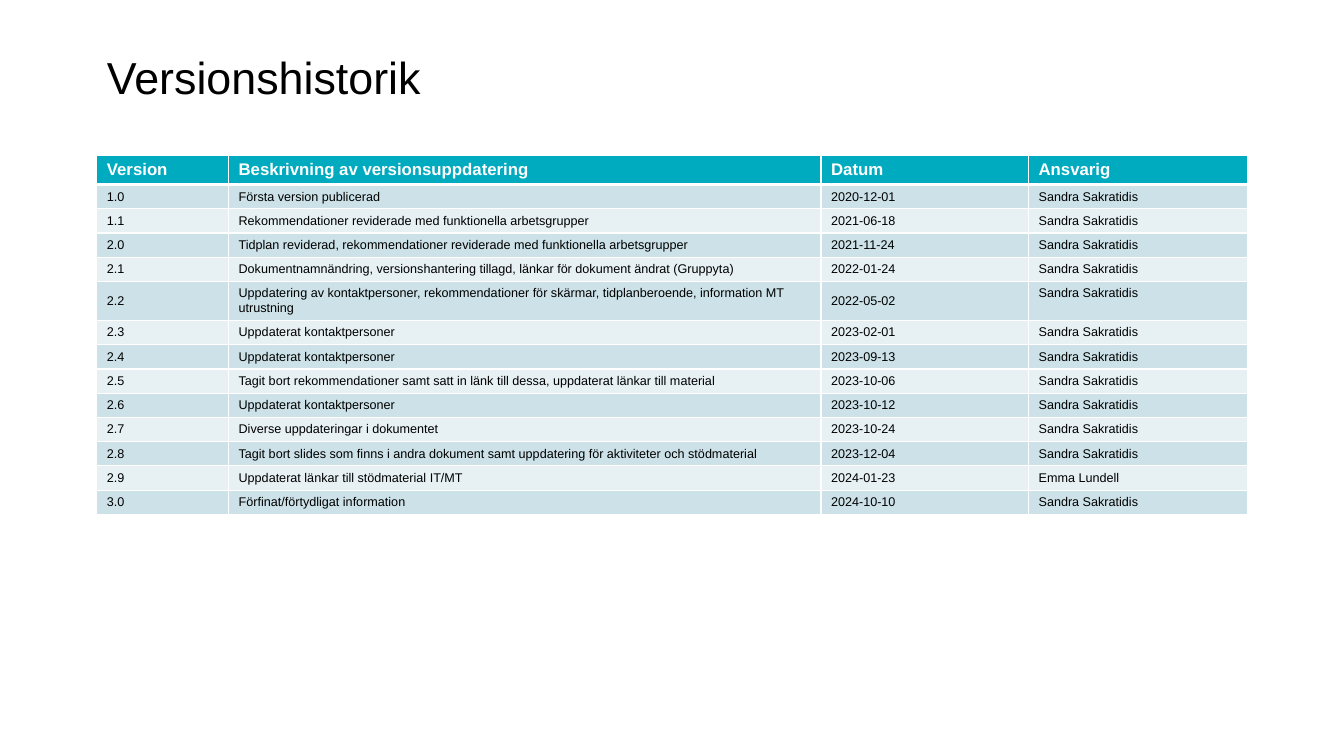
from lxml.etree import SubElement
from pptx import Presentation
from pptx.dml.color import RGBColor
from pptx.enum.text import MSO_ANCHOR, PP_ALIGN
from pptx.oxml.ns import qn
from pptx.util import Cm, Pt

LEFT, WIDTH = 2.44, 29.01
COLUMN_WIDTHS = [3.32, 14.93, 5.23, 5.53]
HEADER_HEIGHT, LINE_HEIGHT, TWO_LINE_HEIGHT = 0.73, 0.61, 0.98
TWO_LINE_VERSION = "2.2"

HEADINGS = ["Version", "Beskrivning av versionsuppdatering", "Datum", "Ansvarig"]
MAIN_AUTHOR = "Sandra Sakratidis"
AUTHORS = {"2.9": "Emma Lundell"}
VERSIONS = [
    ("1.0", "Första version publicerad", "2020-12-01"),
    ("1.1", "Rekommendationer reviderade med funktionella arbetsgrupper", "2021-06-18"),
    ("2.0", "Tidplan reviderad, rekommendationer reviderade med funktionella "
            "arbetsgrupper", "2021-11-24"),
    ("2.1", "Dokumentnamnändring, versionshantering tillagd, länkar för dokument "
            "ändrat (Gruppyta)", "2022-01-24"),
    ("2.2", "Uppdatering av kontaktpersoner, rekommendationer för skärmar, "
            "tidplanberoende, information MT utrustning", "2022-05-02"),
    ("2.3", "Uppdaterat kontaktpersoner", "2023-02-01"),
    ("2.4", "Uppdaterat kontaktpersoner", "2023-09-13"),
    ("2.5", "Tagit bort rekommendationer samt satt in länk till dessa, uppdaterat "
            "länkar till material", "2023-10-06"),
    ("2.6", "Uppdaterat kontaktpersoner", "2023-10-12"),
    ("2.7", "Diverse uppdateringar i dokumentet", "2023-10-24"),
    ("2.8", "Tagit bort slides som finns i andra dokument samt uppdatering för "
            "aktiviteter och stödmaterial", "2023-12-04"),
    ("2.9", "Uppdaterat länkar till stödmaterial IT/MT", "2024-01-23"),
    ("3.0", "Förfinat/förtydligat information", "2024-10-10"),
]


def color(value):
    return RGBColor.from_string(value)


class SlideBuilder:
    font_name = "Arial"
    text_color, light = "000000", "FFFFFF"
    header_fill = "00ABC0"
    band_fills = ["CCE2E8", "E7F1F4"]

    def __init__(self, deck):
        self.slide = deck.slides.add_slide(deck.slide_layouts[5])

    def format_text(self, frame, size, text_color, bold=False):
        for para in frame.paragraphs:
            para.alignment = PP_ALIGN.LEFT
            for span in para.runs:
                span.font.name = self.font_name
                span.font.size = Pt(size)
                span.font.bold = bold
                span.font.color.rgb = color(text_color)

    def title(self, text, left, top, width, height):
        box = self.slide.shapes.title
        box.left, box.top, box.width, box.height = map(Cm, (left, top, width, height))
        frame = box.text_frame
        frame.text = text
        frame.vertical_anchor = MSO_ANCHOR.TOP
        frame.margin_top = Cm(0.15)
        self.format_text(frame, 32, self.text_color)

    def border(self, cell, side, width):
        line = SubElement(cell._tc.get_or_add_tcPr(), qn(f"a:ln{side}"), w=str(Pt(width)))
        fill = SubElement(line, qn("a:solidFill"))
        SubElement(fill, qn("a:srgbClr"), val=self.light)

    def cell(self, cell, text, row, column):
        is_header = row == 0
        cell.text = text
        # Borders must precede the fill in the cell properties.
        for side in "LRTB":
            is_header_edge = (row, side) in [(0, "B"), (1, "T")]
            self.border(cell, side, 3 if is_header_edge else 1)
        cell.fill.solid()
        if is_header:
            cell.fill.fore_color.rgb = color(self.header_fill)
            self.format_text(cell.text_frame, 12, self.light, bold=True)
        else:
            cell.fill.fore_color.rgb = color(self.band_fills[(row - 1) % 2])
            self.format_text(cell.text_frame, 9, self.text_color)
            if HEADINGS[column] in ("Version", "Datum"):
                cell.vertical_anchor = MSO_ANCHOR.MIDDLE

    def table(self, rows, left, top, column_widths, row_heights):
        frame = self.slide.shapes.add_table(
            len(rows), len(column_widths), Cm(left), Cm(top),
            Cm(sum(column_widths)), Cm(sum(row_heights)))
        table = frame.table
        for column, width in zip(table.columns, column_widths):
            column.width = Cm(width)
        for row, (texts, height) in enumerate(zip(rows, row_heights)):
            table.rows[row].height = Cm(height)
            for column, text in enumerate(texts):
                self.cell(table.cell(row, column), text, row, column)


def main():
    deck = Presentation()
    deck.slide_width, deck.slide_height = Cm(33.87), Cm(19.05)
    page = SlideBuilder(deck)
    page.title("Versionshistorik", LEFT, 1.09, WIDTH, 1.19)

    rows = [HEADINGS] + [[*entry, AUTHORS.get(entry[0], MAIN_AUTHOR)] for entry in VERSIONS]
    heights = [HEADER_HEIGHT] + [
        TWO_LINE_HEIGHT if version == TWO_LINE_VERSION else LINE_HEIGHT
        for version, *_ in VERSIONS]
    page.table(rows, LEFT, 3.92, COLUMN_WIDTHS, heights)
    deck.save("out.pptx")


if __name__ == "__main__":
    main()
